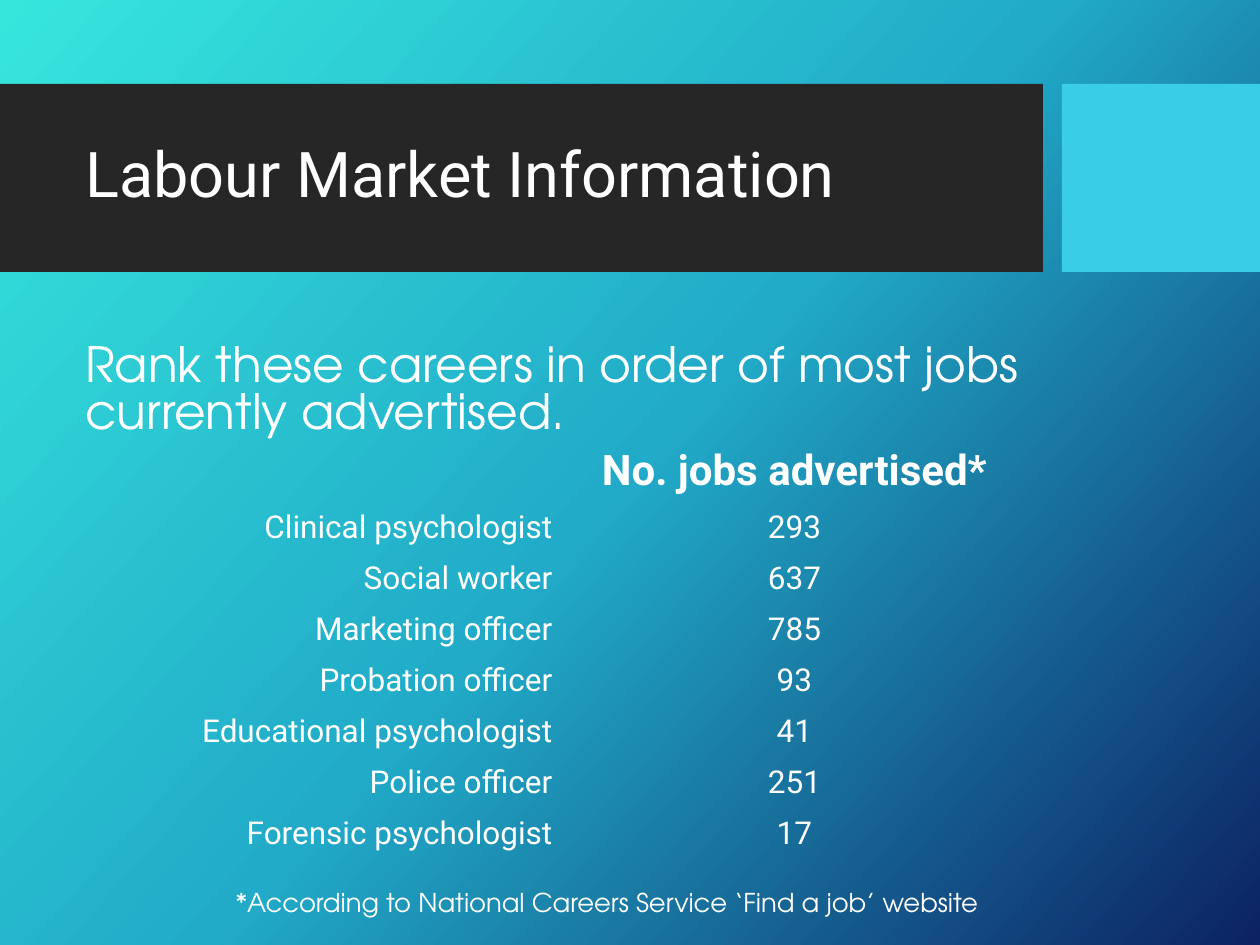
import copy
import pptx
import pptx.util
import pptx.dml.color
import pptx.enum.shapes
import pptx.enum.text

PX = 914400 // 126
WHITE = "FFFFFF"
ALIGN = pptx.enum.text.PP_ALIGN
ANCHOR = pptx.enum.text.MSO_ANCHOR


def rgb(value):
    return pptx.dml.color.RGBColor.from_string(value)


def put_text(tf, text, size, font, align=ALIGN.LEFT, bold=False):
    p = tf.paragraphs[0]
    p.text = text
    p.alignment = align
    p.font.size = pptx.util.Pt(size)
    p.font.name = font
    p.font.bold = bold
    p.font.color.rgb = rgb(WHITE)
    return p


prs = pptx.Presentation()
prs.slide_width, prs.slide_height = 1260 * PX, 945 * PX
s = prs.slides.add_slide(prs.slide_layouts[6])

# Background gradient
fill = s.background.fill
fill.gradient()
fill.gradient_angle = 360 - 42
stops = s.element.xpath(".//a:gsLst")[0]
stops.insert(1, copy.deepcopy(stops[0]))
for stop, (position, color) in zip(
        fill.gradient_stops, [(0, "36E6DD"), (0.5, "21ABC8"), (1, "0C2263")]):
    stop.position = position
    stop.color.rgb = rgb(color)

# Title band and accent block
for left, width, color in [(0, 1043, "262626"), (1062, 198, "39CDE7")]:
    sp = s.shapes.add_shape(pptx.enum.shapes.MSO_SHAPE.RECTANGLE,
                            left * PX, 84 * PX, width * PX, 188 * PX)
    sp.shadow.inherit = False
    sp.fill.solid()
    sp.fill.fore_color.rgb = rgb(color)
    sp.line.fill.background()

# Title
tf = s.shapes.add_textbox(73 * PX, 103 * PX, 950 * PX, 149 * PX).text_frame
tf.word_wrap = True
tf.vertical_anchor = ANCHOR.MIDDLE
put_text(tf, "Labour Market Information", 36, "Roboto").line_spacing = 0.9

# Task
tf = s.shapes.add_textbox(73 * PX, 339 * PX, 1081 * PX, 105 * PX).text_frame
tf.word_wrap = True
put_text(tf, "Rank these careers in order of most jobs currently advertised.",
         27.8, "TeX Gyre Adventor").line_spacing = 0.8

# Jobs table
jobs = [
    ("", "No. jobs advertised*"),
    ("Clinical psychologist", "293"),
    ("Social worker", "637"),
    ("Marketing officer", "785"),
    ("Probation officer", "93"),
    ("Educational psychologist", "41"),
    ("Police officer", "251"),
    ("Forensic psychologist", "17"),
]
table = s.shapes.add_table(len(jobs), 2, 106 * PX, 440 * PX,
                           918 * PX, 419 * PX).table
table.first_row = table.horz_banding = False
# The "No Style, No Grid" table style
table._tbl.tblPr.find(pptx.oxml.ns.qn("a:tableStyleId")).text = \
    "{2D5ABB26-0587-4C30-8999-92F81FD0307C}"
for i, row in enumerate(jobs):
    header = i == 0
    table.rows[i].height = (62 if header else 51) * PX
    for j, text in enumerate(row):
        cell = table.cell(i, j)
        cell.fill.background()
        put_text(cell.text_frame, text, 24 if header else 18, "Roboto",
                 ALIGN.CENTER if j else ALIGN.RIGHT, header)

# Footnote
tf = s.shapes.add_textbox(236 * PX, 887 * PX, 800 * PX, 36 * PX).text_frame
tf.word_wrap = True
tf.margin_left = tf.margin_top = tf.margin_right = tf.margin_bottom = 0
put_text(tf, "*According to National Careers Service ‘Find a job’ website",
         14.8, "TeX Gyre Adventor")

prs.save("out.pptx")
